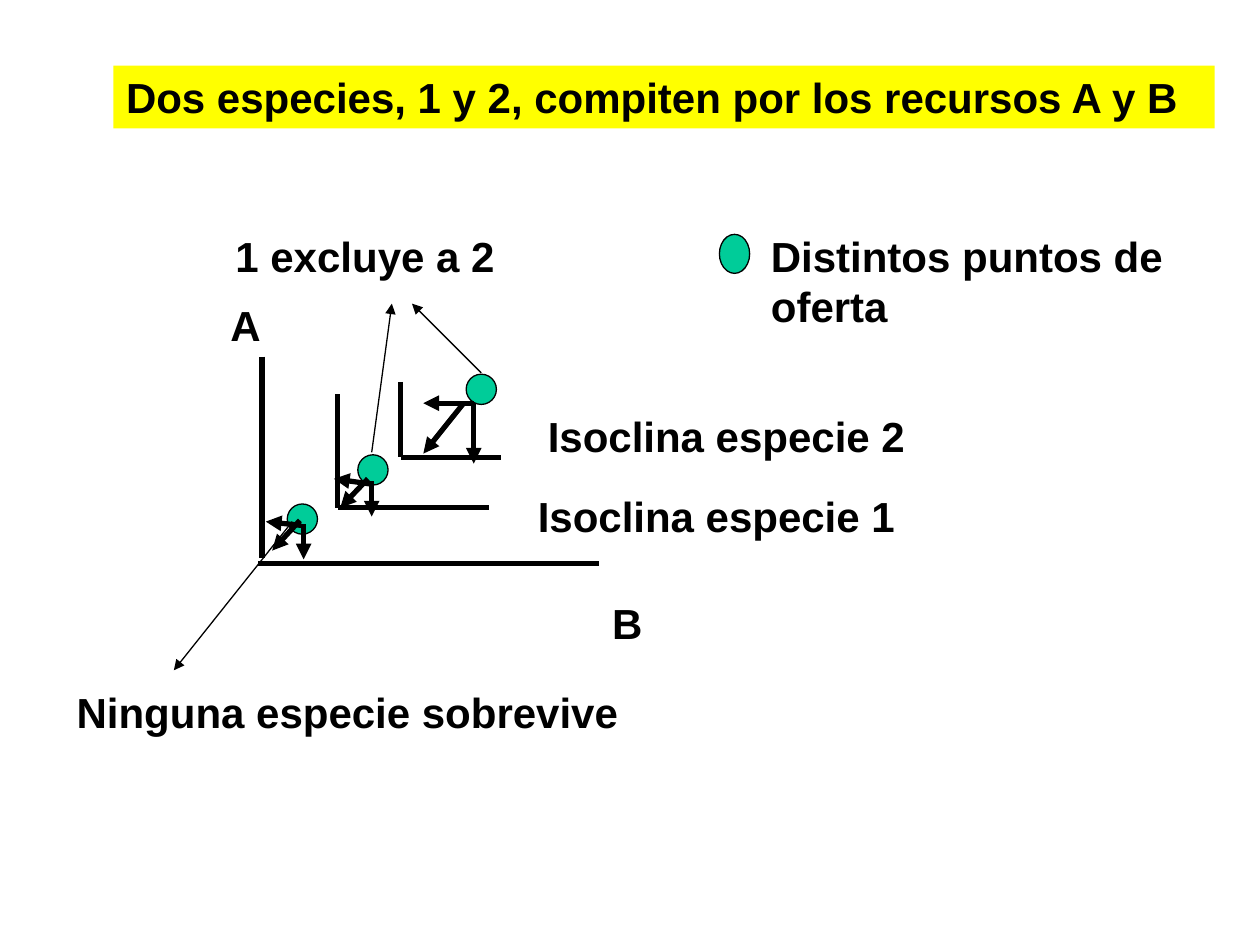
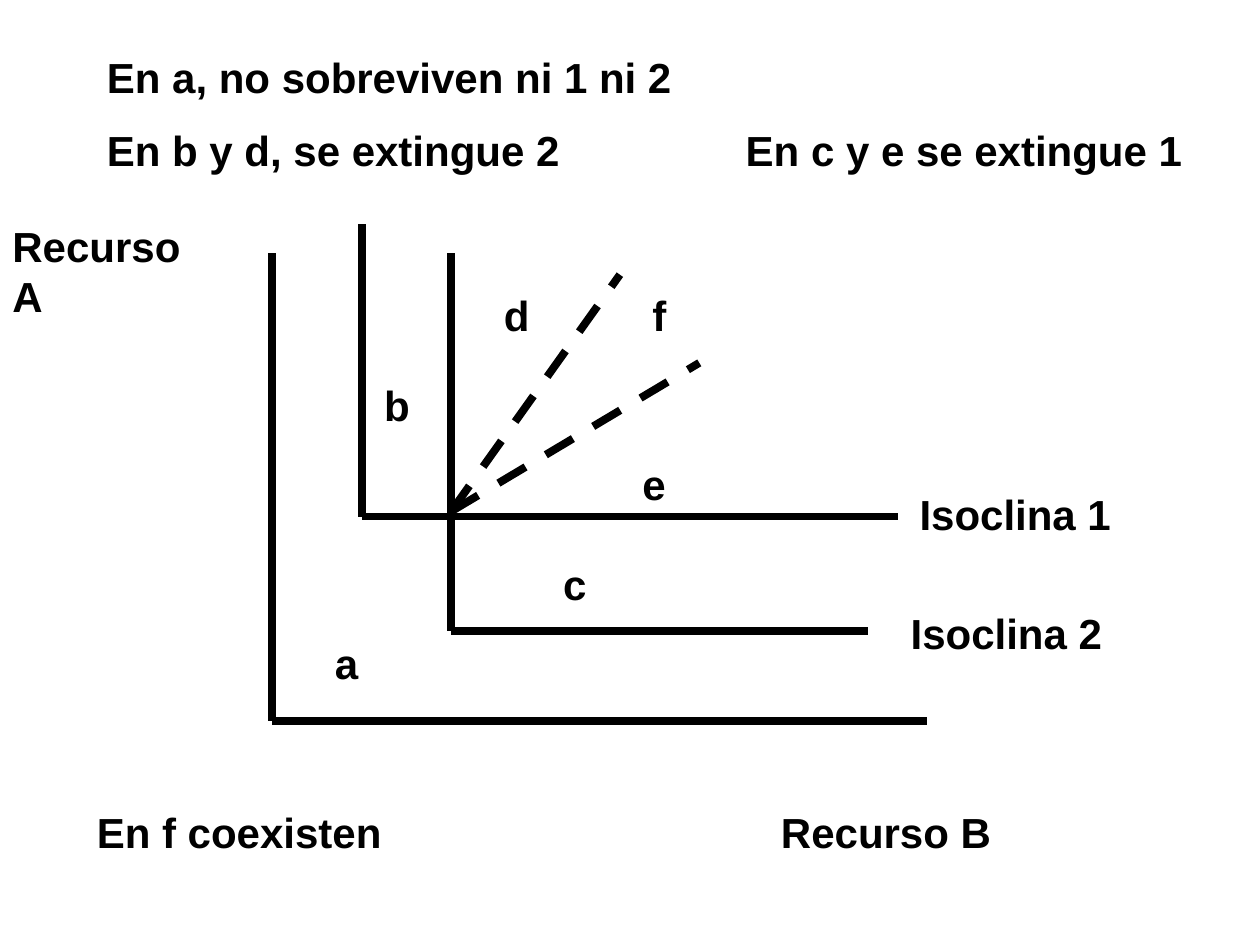
from lxml import etree
from pptx import Presentation
from pptx import util as u
from pptx.dml.color import RGBColor
from pptx.enum import dml, shapes, text
from pptx.oxml import ns

COLORS = {"ink": "000000", "paper": "FFFFFF", "banner": "FFFF00", "supply": "00CC99"}
FONT, FONT_SIZE, PARA_GAP = "Arial", 24, 13
TITLE_ONLY, BLANK = 5, 6
LINE_HEIGHT = 0.5

TITLE = ("Dos especies, 1 y 2, compiten por los recursos A y B", (0.9, 0.52, 8.74, LINE_HEIGHT))

COMPETITION_LABELS = [
    ("Isoclina especie 1", 4.17, 3.84, 3.23),
    ("Isoclina especie 2", 4.25, 3.21, 3.23),
    ("A", 1.73, 2.33, 0.98),
    ("B", 4.76, 4.69, 0.71),
    ("Distintos puntos de oferta", 6.02, 1.78, 3.7),
    ("1 excluye a 2", 1.77, 1.78, 2.91),
    ("Ninguna especie sobrevive", 0.51, 5.4, 4.65),
]
COMPETITION_AXES = [
    ((2.08, 2.83), (2.08, 4.43)),
    ((2.05, 4.47), (4.75, 4.47)),
]
COMPETITION_ISOCLINES = [
    ((2.68, 3.13), (2.68, 4.03), (3.88, 4.03)),
    ((3.18, 3.03), (3.18, 3.63), (3.98, 3.63)),
]
SUPPLY_SIZE = 0.24
SUPPLY_POINTS = [(3.7, 2.97), (2.28, 4), (2.84, 3.61)]
LEGEND_POINT = (5.71, 1.86, SUPPLY_SIZE, 0.31)
OUTCOME_ARROWS = [
    ((2.95, 3.59), (3.11, 2.41)),
    ((3.82, 2.96), (3.27, 2.41)),
    ((2.32, 4.14), (1.38, 5.32)),
]
CONSUMPTION_ARROWS = [
    ((3.76, 3.2), (3.36, 3.2)),
    ((3.76, 3.2), (3.76, 3.68)),
    ((3.68, 3.2), (3.36, 3.6)),
    ((2.93, 3.84), (2.65, 3.8)),
    ((2.95, 3.82), (2.95, 4.1)),
    ((2.92, 3.8), (2.7, 4.03)),
    ((2.39, 4.17), (2.11, 4.14)),
    ((2.41, 4.16), (2.41, 4.44)),
    ((2.38, 4.13), (2.16, 4.37)),
]

OUTCOMES = (
    "En a, no sobreviven ni 1 ni 2\nEn b y d, se extingue 2\tEn c y e se extingue 1",
    0.75, 0.36, 8.98,
)
OUTCOME_TAB = 5.07
REGION_LABELS = [
    ("Isoclina 1", 7.2, 3.83, 1.81),
    ("Isoclina 2", 7.13, 4.77, 2.13),
    ("Recurso B", 6.1, 6.35, 2.44),
    ("Recurso A", 0, 1.7, 1.61),
    ("a", 2.56, 5.01, 0.55),
    ("b", 2.95, 2.96, 0.47),
    ("c", 4.37, 4.38, 0.79),
    ("d", 3.9, 2.25, 0.55),
    ("e", 5, 3.59, 0.63),
    ("f", 5.08, 2.25, 0.79),
    ("En f coexisten", 0.67, 6.35, 3.07),
]
REGION_LINES = [
    ((2.16, 2.01), (2.16, 5.72), (7.36, 5.72)),
    ((3.58, 2.01), (3.58, 5.01), (6.89, 5.01)),
    ((2.87, 1.78), (2.87, 4.1), (7.13, 4.1)),
]
CROSSING = (3.58, 4.06)
CONSUMPTION_ENDS = [(4.92, 2.18), (5.55, 2.88)]


def rgb(name):
    return RGBColor.from_string(COLORS[name])


def inches(values):
    return [u.Inches(value) for value in values]


def format_text(frame):
    frame.word_wrap = True
    frame.auto_size = text.MSO_AUTO_SIZE.NONE
    frame.vertical_anchor = text.MSO_ANCHOR.TOP
    for index, para in enumerate(frame.paragraphs):
        para.alignment = text.PP_ALIGN.LEFT
        para.space_before = u.Pt(PARA_GAP if index else 0)
        for span in para.runs:
            span.font.name = FONT
            span.font.size = u.Pt(FONT_SIZE)
            span.font.bold = True
            span.font.color.rgb = rgb("ink")


def add_label(page, words, left, top, width):
    box = page.shapes.add_textbox(*inches((left, top, width, LINE_HEIGHT)))
    box.text_frame.text = words
    format_text(box.text_frame)
    return box


def add_line(page, start, end, weight, arrow=False, dashed=False):
    line = page.shapes.add_connector(shapes.MSO_CONNECTOR.STRAIGHT, *inches(start + end))
    line.line.color.rgb = rgb("ink")
    line.line.width = u.Pt(weight)
    if dashed:
        line.line.dash_style = dml.MSO_LINE.DASH
    if arrow:
        outline = line.line._get_or_add_ln()
        etree.SubElement(outline, ns.qn("a:tailEnd"), type="triangle")
    etree.SubElement(line._element.spPr, ns.qn("a:effectLst"))


def add_polyline(page, points, weight):
    for start, end in zip(points, points[1:]):
        add_line(page, start, end, weight)


def add_supply_point(page, left, top, width=SUPPLY_SIZE, height=SUPPLY_SIZE):
    dot = page.shapes.add_shape(shapes.MSO_SHAPE.OVAL, *inches((left, top, width, height)))
    dot.shadow.inherit = False
    dot.fill.solid()
    dot.fill.fore_color.rgb = rgb("supply")
    dot.line.color.rgb = rgb("ink")
    dot.line.width = u.Pt(0.75)


def add_page(deck, layout):
    page = deck.slides.add_slide(deck.slide_layouts[layout])
    page.background.fill.solid()
    page.background.fill.fore_color.rgb = rgb("paper")
    return page


def build_competition(deck):
    page = add_page(deck, TITLE_ONLY)
    title = page.shapes.title
    words, place = TITLE
    title.left, title.top, title.width, title.height = inches(place)
    title.text_frame.text = words
    title.fill.solid()
    title.fill.fore_color.rgb = rgb("banner")
    format_text(title.text_frame)

    for points in COMPETITION_AXES + COMPETITION_ISOCLINES:
        add_polyline(page, points, 3)
    for place in SUPPLY_POINTS + [LEGEND_POINT]:
        add_supply_point(page, *place)
    for label in COMPETITION_LABELS:
        add_label(page, *label)
    for start, end in OUTCOME_ARROWS:
        add_line(page, start, end, 0.75, arrow=True)
    for start, end in CONSUMPTION_ARROWS:
        add_line(page, start, end, 3, arrow=True)


def build_regions(deck):
    page = add_page(deck, BLANK)
    for points in REGION_LINES:
        add_polyline(page, points, 4.5)
    for end in CONSUMPTION_ENDS:
        add_line(page, CROSSING, end, 4.5, dashed=True)
    for label in REGION_LABELS:
        add_label(page, *label)

    outcomes = add_label(page, *OUTCOMES)
    outcomes.height = u.Inches(1.1)
    properties = outcomes.text_frame.paragraphs[1]._p.get_or_add_pPr()
    tabs = etree.SubElement(properties, ns.qn("a:tabLst"))
    etree.SubElement(tabs, ns.qn("a:tab"), pos=str(u.Inches(OUTCOME_TAB)), algn="l")


def main():
    deck = Presentation()
    deck.slide_width, deck.slide_height = inches((10, 7.5))
    build_competition(deck)
    build_regions(deck)
    deck.save("out.pptx")


if __name__ == "__main__":
    main()
